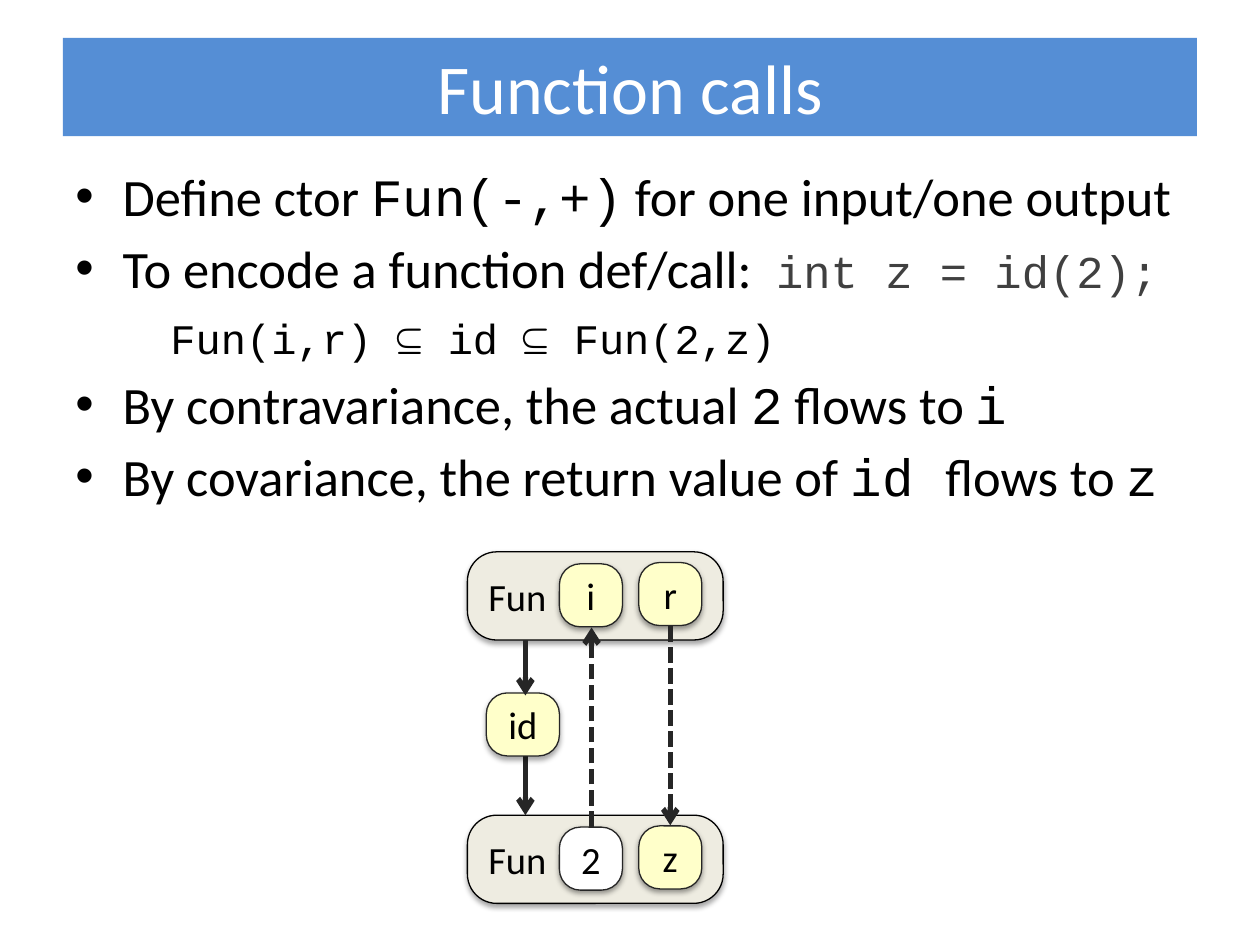
from dataclasses import dataclass
from typing import Any, NamedTuple

from lxml.etree import SubElement
from pptx import Presentation
from pptx.dml.color import RGBColor
from pptx.enum.dml import MSO_LINE
from pptx.enum.shapes import MSO_CONNECTOR, MSO_SHAPE
from pptx.enum.text import MSO_ANCHOR, PP_ALIGN
from pptx.oxml.ns import qn
from pptx.util import Inches, Pt


@dataclass(frozen=True)
class Theme:
    """Fonts, colours and type sizes."""
    sans: str = "Calibri"
    mono: str = "Courier New"
    black: str = "000000"
    white: str = "FFFFFF"
    banner: str = "558ED5"
    code: str = "404040"
    edge: str = "262626"
    ctor: str = "EEECE1"
    var: str = "FFFFCA"
    title: float = 40
    body: float = 30
    inline: float = 26
    formula: float = 24
    node: float = 22


T = Theme()
COLS, ROWS = 100, 75
WIDTH, HEIGHT = Inches(10), Inches(7.5)


class Area(NamedTuple):
    """A place on the grid, in columns and rows."""
    col: float
    row: float
    cols: float
    rows: float


class Span(NamedTuple):
    """A stretch of text in one format."""
    text: str
    font: str = T.sans
    size: float = T.body
    color: str = T.black
    tracking: float = 0


class Node(NamedTuple):
    """A rounded box of the flow graph."""
    label: str
    area: Area
    fill: str = T.var
    line: str = T.edge
    align: Any = PP_ALIGN.CENTER
    margin: float = 0
    shadow_alpha: int = 38
    shadow_dist: float = 1.6


class Arrow(NamedTuple):
    """A vertical flow between two rows."""
    col: float
    start: float
    end: float
    dash: Any = None


class Ctor(NamedTuple):
    """A Fun constructor with its argument and result."""
    row: float
    arg: str
    arg_fill: str
    result: str


BULLETS = [
    [Span("Define ctor "), Span("Fun(-,+)", T.mono), Span(" for one input/one output")],
    [Span("To encode a function def/call:"), Span(" ", tracking=6.8),
     Span("int z = id(2);", T.mono, T.inline, T.code)],
    [Span("Fun(i,r) ⊆ id ⊆ Fun(2,z)", T.mono, T.formula)],
    [Span("By contravariance, the actual "), Span("2", T.mono), Span(" flows to "),
     Span("i", T.mono)],
    [Span("By covariance, the return value of "), Span("id ", T.mono), Span("flows to "),
     Span("z", T.mono)],
]
FORMULA = 2
CTORS = [Ctor(43.8, "i", T.var, "r"), Ctor(64.7, "2", T.white, "z")]
ID_NODE = Node("id", Area(38.6, 55, 5.8, 5), shadow_alpha=35, shadow_dist=1.8)
ARROWS = [
    Arrow(41.7, 60, 64.7),
    Arrow(53.2, 49.7, 65.5, MSO_LINE.SQUARE_DOT),
    Arrow(46.95, 65.6, 49.8, MSO_LINE.SQUARE_DOT),
]
ID_ARROW = Arrow(41.7, 50.8, 55.2)


def x(cols: float) -> int:
    """Width of a number of columns."""
    return round(WIDTH * cols / COLS)


def y(rows: float) -> int:
    """Height of a number of rows."""
    return round(HEIGHT * rows / ROWS)


def place(area: Area) -> tuple[int, int, int, int]:
    """Left, top, width and height of a grid area."""
    return x(area.col), y(area.row), x(area.cols), y(area.rows)


def apply(obj: Any, values: dict[str, Any]) -> None:
    """Set attributes from a dict of format values."""
    for name, value in values.items():
        setattr(obj, name, value)


def add_span(p: Any, span: Span) -> None:
    """Add a formatted run to a paragraph."""
    r = p.add_run()
    r.text = span.text
    apply(r.font, {"name": span.font, "size": Pt(span.size)})
    r.font.color.rgb = RGBColor.from_string(span.color)
    if span.tracking:
        r._r.get_or_add_rPr().set("spc", str(round(span.tracking * 100)))


def add_box(shapes: Any, kind: Any, area: Area, fill: str, span: Span, align: Any) -> Any:
    """Add a filled shape with one line of text."""
    sp = shapes.add_shape(kind, *place(area))
    sp.shadow.inherit = False
    sp.fill.solid()
    sp.fill.fore_color.rgb = RGBColor.from_string(fill)
    sp.line.fill.background()
    apply(sp.text_frame, {"vertical_anchor": MSO_ANCHOR.MIDDLE, "word_wrap": True})
    p = sp.text_frame.paragraphs[0]
    p.alignment = align
    add_span(p, span)
    return sp


def add_node(shapes: Any, node: Node) -> None:
    """Add a rounded box with a soft shadow."""
    sp = add_box(shapes, MSO_SHAPE.ROUNDED_RECTANGLE, node.area, node.fill,
                 Span(node.label, size=T.node), node.align)
    sp.adjustments[0] = 0.333
    sp.line.color.rgb = RGBColor.from_string(node.line)
    sp.line.width = Pt(0.75)
    apply(sp.text_frame, {"margin_left": x(node.margin), "margin_right": x(node.margin)})
    effects = sp._element.spPr.find(qn("a:effectLst"))
    shadow = SubElement(effects, qn("a:outerShdw"), blurRad=str(Pt(3.1)),
                        dist=str(Pt(node.shadow_dist)), dir="5400000", rotWithShape="0")
    color = SubElement(shadow, qn("a:srgbClr"), val=T.black)
    SubElement(color, qn("a:alpha"), val=str(node.shadow_alpha * 1000))


def add_ctor(shapes: Any, ctor: Ctor) -> None:
    """Add a grouped constructor box with its two cells."""
    group = shapes.add_group_shape().shapes
    add_node(group, Node("Fun", Area(37.1, ctor.row, 20.3, 7), T.ctor, T.black,
                         PP_ALIGN.LEFT, 1, 35, 1.8))
    add_node(group, Node(ctor.arg, Area(44.4, ctor.row + 0.95, 5, 5), ctor.arg_fill))
    add_node(group, Node(ctor.result, Area(50.7, ctor.row + 0.85, 5, 5)))


def add_arrow(shapes: Any, arrow: Arrow) -> None:
    """Add a vertical line with an open arrowhead."""
    line = shapes.add_connector(MSO_CONNECTOR.STRAIGHT, x(arrow.col), y(arrow.start),
                                x(arrow.col), y(arrow.end))
    line.line.color.rgb = RGBColor.from_string(T.edge)
    apply(line.line, {"width": Pt(3), "dash_style": arrow.dash})
    SubElement(line.line._get_or_add_ln(), qn("a:tailEnd"), type="arrow")
    SubElement(line._element.spPr, qn("a:effectLst"))


def add_bullets(shapes: Any, area: Area) -> None:
    """Add the bullet list with its indented formula."""
    tf = shapes.add_textbox(*place(area)).text_frame
    tf.word_wrap = True
    for i, spans in enumerate(BULLETS):
        p = tf.paragraphs[0] if i == 0 else tf.add_paragraph()
        pPr = p._p.get_or_add_pPr()
        if i == FORMULA:
            apply(p, {"line_spacing": Pt(36.6), "space_before": Pt(0)})
            pPr.set("marL", str(x(7.55)))
        else:
            p.space_before = Pt(5.2)
            apply_indent = {"marL": x(3.75), "indent": -x(3.75)}
            for name, value in apply_indent.items():
                pPr.set(name, str(value))
            SubElement(pPr, qn("a:buFont"), typeface="Arial")
            SubElement(pPr, qn("a:buChar"), char="•")
        for span in spans:
            add_span(p, span)


def main() -> None:
    """Build the slide and save it."""
    prs = Presentation()
    apply(prs, {"slide_width": WIDTH, "slide_height": HEIGHT})
    shapes = prs.slides.add_slide(prs.slide_layouts[6]).shapes
    add_box(shapes, MSO_SHAPE.RECTANGLE, Area(5, 3, 90, 7.8), T.banner,
            Span("Function calls", size=T.title, color=T.white), PP_ALIGN.CENTER)
    add_bullets(shapes, Area(5, 12.5, 90, 31.3))
    for ctor in CTORS:
        add_ctor(shapes, ctor)
    for arrow in ARROWS:
        add_arrow(shapes, arrow)
    add_node(shapes, ID_NODE)
    add_arrow(shapes, ID_ARROW)
    prs.save("out.pptx")


if __name__ == "__main__":
    main()
